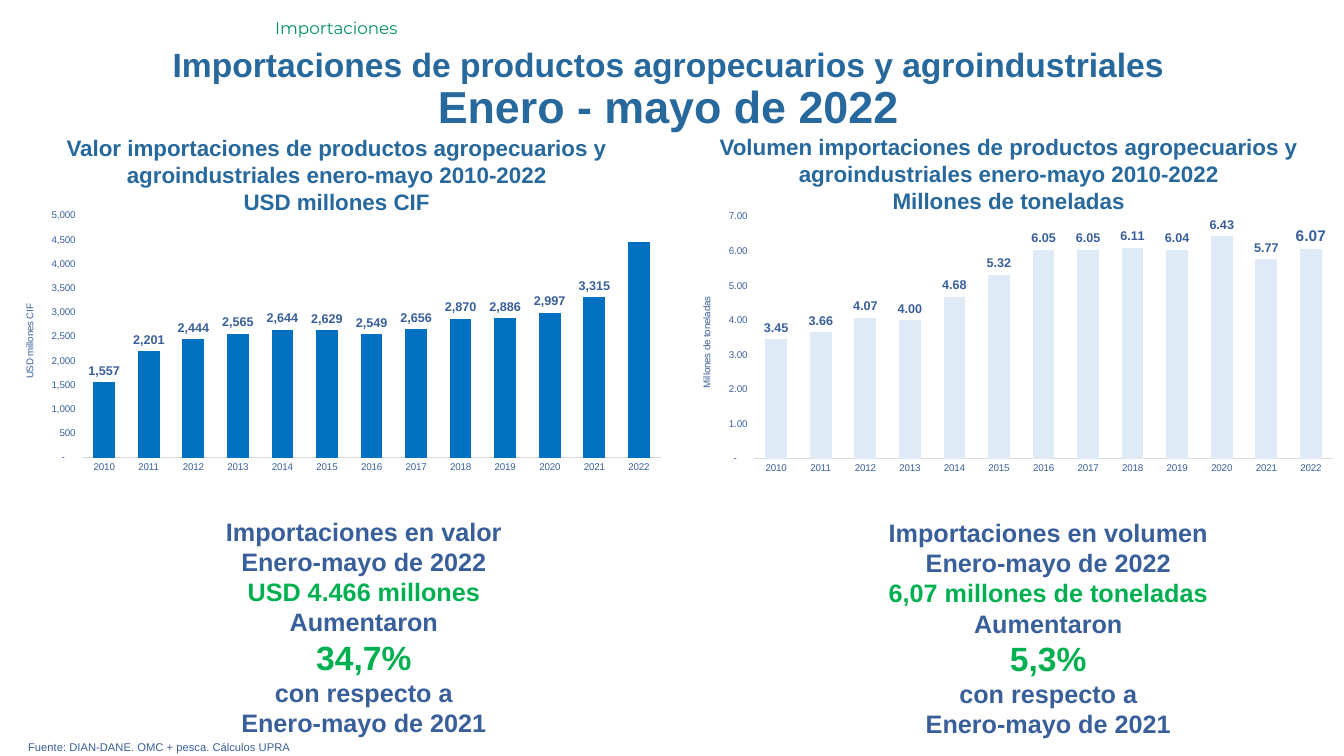
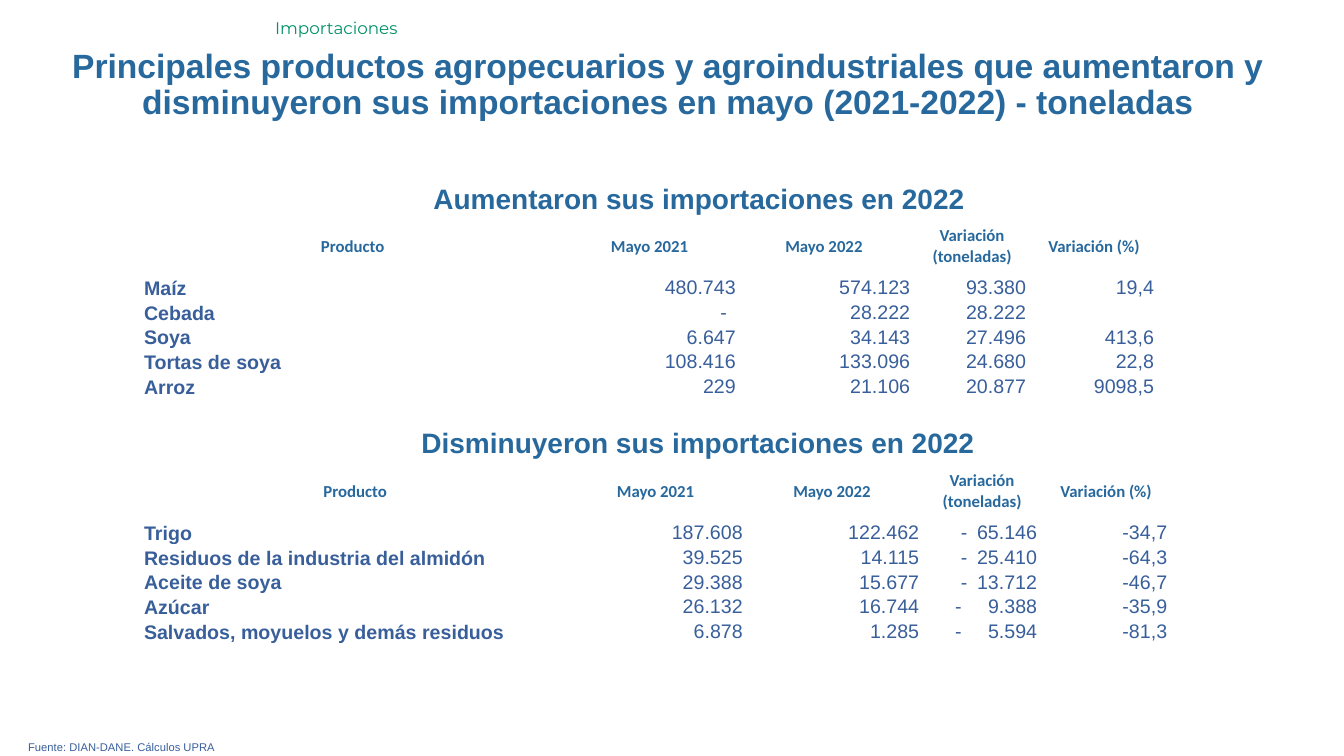
from pptx import Presentation
from pptx.chart.data import CategoryChartData
from pptx.dml.color import RGBColor
from pptx.enum import chart as ch, text
from pptx.oxml import ns, parse_xml
from pptx.util import Pt

GREEN, TITLE, BODY, ACCENT = "009267", "27689D", "395F9B", "00B050"
BLUE, PALE, WHITE, GREY = "0070C0", "DEEBF7", "FFFFFF", "D9D9D9"
LEFT, CENTER, RIGHT = text.PP_ALIGN.LEFT, text.PP_ALIGN.CENTER, text.PP_ALIGN.RIGHT


def rgb(value):
    return RGBColor.from_string(value)


def style(font, size, color, bold=False, name="Arial"):
    font.size, font.bold, font.name = Pt(size), bold, name
    font.color.rgb = rgb(color)


def layout(x, y, w, h):
    return parse_xml(
        f'<c:layout {ns.nsdecls("c")}><c:manualLayout><c:layoutTarget val="inner"/>'
        '<c:xMode val="edge"/><c:yMode val="edge"/>'
        f'<c:x val="{x}"/><c:y val="{y}"/><c:w val="{w}"/><c:h val="{h}"/>'
        '</c:manualLayout></c:layout>')


class Deck:
    def __init__(self):
        self.prs = Presentation()
        self.prs.slide_width, self.prs.slide_height = Pt(960), Pt(540)

    def slide(self, lines, box, source):
        self.s = self.prs.slides.add_slide(self.prs.slide_layouts[5])
        self.title(lines, box)
        self.text(189.4, 9.4, 770, 21.6, ["Importaciones"], 12, GREEN, False, LEFT, "Montserrat")
        self.text(13, 525, 929.5, 17, [source], 8, BODY, False, text.PP_ALIGN.JUSTIFY)

    def title(self, lines, box):
        sp = self.s.shapes.title
        sp.left, sp.top, sp.width, sp.height = map(Pt, box)
        tf = sp.text_frame
        tf.auto_size = text.MSO_AUTO_SIZE.NONE
        tf.vertical_anchor = text.MSO_ANCHOR.MIDDLE
        p = tf.paragraphs[0]
        p.alignment, p.line_spacing = CENTER, 0.9
        for i, (line, size) in enumerate(lines):
            if i:
                p.add_line_break()
            r = p.add_run()
            r.text = line
            style(r.font, size, TITLE, True)

    def text(self, x, y, w, h, lines, size, color, bold=True, align=CENTER, name="Arial"):
        tf = self.s.shapes.add_textbox(Pt(x), Pt(y), Pt(w), Pt(h)).text_frame
        tf.word_wrap = True
        tf.auto_size = text.MSO_AUTO_SIZE.SHAPE_TO_FIT_TEXT
        for i, line in enumerate(lines):
            p = tf.add_paragraph() if i else tf.paragraphs[0]
            words, p_size, p_color = (line, size, color) if isinstance(line, str) else line
            p.text, p.alignment = words, align
            style(p.font, p_size, p_color, bold, name)

    def chart(self, x, y, values, unit, fmt, top, step, color, last_color):
        data = CategoryChartData(number_format=fmt)
        data.categories = [str(year) for year in range(2010, 2023)]
        data.add_series("Series 1", values)
        chart = self.s.shapes.add_chart(
            ch.XL_CHART_TYPE.COLUMN_CLUSTERED, Pt(x), Pt(y), Pt(480), Pt(247.7), data).chart
        chart.has_title = chart.has_legend = False
        style(chart.font, 10, "000000")
        for axis in (chart.category_axis, chart.value_axis):
            axis.major_tick_mark = axis.minor_tick_mark = ch.XL_TICK_MARK.NONE
            axis.has_major_gridlines = False
            style(axis.tick_labels.font, 7, BODY)
        line = chart.category_axis.format.line
        line.color.rgb, line.width = rgb(GREY), Pt(0.75)
        axis = chart.value_axis
        axis.format.line.fill.background()
        axis.minimum_scale, axis.maximum_scale, axis.major_unit = 0, top, step
        axis.tick_labels.number_format = f'{fmt}_-;;"-"??_-'
        axis.tick_labels.number_format_is_linked = False
        tf = axis.axis_title.text_frame
        tf.text = unit
        style(tf.paragraphs[0].font, 7, BODY)
        tf._txBody.bodyPr.set("rot", "-5400000")

        plot = chart.plots[0]
        plot.gap_width, plot.overlap, plot.vary_by_categories = 105, 74, False
        ser = plot.series[0]
        ser.format.fill.solid()
        ser.format.fill.fore_color.rgb = rgb(color)
        labels = ser.data_labels
        labels.show_value = True
        labels.number_format, labels.number_format_is_linked = fmt, False
        labels.position = ch.XL_LABEL_POSITION.OUTSIDE_END
        style(labels.font, 9, BODY, True)
        last = ser.points[len(values) - 1].data_label
        style(last.font, 11, last_color, True)
        last.position = ch.XL_LABEL_POSITION.OUTSIDE_END
        idx = chart._chartSpace.xpath(".//c:dLbl/c:idx")[0]
        idx.addnext(parse_xml(
            f'<c:spPr {ns.nsdecls("c", "a")}><a:solidFill><a:srgbClr val="{color}"/>'
            '</a:solidFill></c:spPr>'))
        idx.addnext(parse_xml(
            f'<c:numFmt {ns.nsdecls("c")} formatCode="{fmt}" sourceLinked="0"/>'))
        area = chart._chartSpace.xpath(".//c:plotArea")[0]
        for old in area.xpath("c:layout"):
            area.remove(old)
        area.insert(0, layout(0.122, 0.102, 0.862, 0.698))

    def cell(self, cell, words, size, color, bold, align, name="Arial", right=0.7):
        cell.fill.background()
        cell.margin_left = cell.margin_top = Pt(0.7)
        cell.margin_right, cell.margin_bottom = Pt(right), 0
        cell.vertical_anchor = text.MSO_ANCHOR.MIDDLE
        p = cell.text_frame.paragraphs[0]
        if words.startswith("- "):
            number = words[2:]
            words, align = f"\t-\t{number}", LEFT
            stops = (33 if len(number) > 5 else 29, 83)
            tabs = "".join(f'<a:tab pos="{Pt(stop)}" algn="r"/>' for stop in stops)
            p._p.get_or_add_pPr().append(
                parse_xml(f'<a:tabLst {ns.nsdecls("a")}>{tabs}</a:tabLst>'))
        if words:
            p.text = words
        else:
            p._p.get_or_add_endParaRPr().set("sz", str(size * 100))
        p.alignment = align
        style(p.font, size, color, bold, name)

    def table(self, y, widths, rows):
        header = ("Producto", "Mayo 2021", "Mayo 2022", "Variación (toneladas)", "Variación (%)")
        tbl = self.s.shapes.add_table(
            len(rows) + 1, len(header), Pt(102.2), Pt(y), Pt(sum(widths)), Pt(129.8)).table
        tbl.first_row = tbl.horz_banding = False
        for col, width in zip(tbl.columns, widths):
            col.width = Pt(width)
        for i, row in enumerate(tbl.rows):
            row.height = Pt(17.6 if i else 41.8)
        for j, words in enumerate(header):
            self.cell(tbl.cell(0, j), words, 12, TITLE, True, CENTER, "Calibri")
        for i, row in enumerate(rows, 1):
            for j, words in enumerate(row):
                right = 7 if words == "-" else 5 if j == 3 else 0.7
                self.cell(tbl.cell(i, j), words, 14, BODY, j == 0, RIGHT if j else LEFT, right=right)
            tbl.cell(i, 0).vertical_anchor = text.MSO_ANCHOR.BOTTOM


def main():
    deck = Deck()
    deck.slide([("Importaciones de productos agropecuarios y agroindustriales", 24),
                ("Enero - mayo de 2022", 32)],
               (63.4, 36, 828, 57.6), "Fuente: DIAN-DANE. OMC + pesca. Cálculos UPRA")
    panels = [
        (0, 92.2, 128.9, "Valor", "USD millones CIF", "USD millones CIF",
         (1557, 2201, 2444, 2565, 2644, 2629, 2549, 2656, 2870, 2886, 2997, 3315, 4466),
         "#,##0", 5000, 500, BLUE, WHITE,
         105.1, 365, "USD 4.466 millones", "34,7%"),
        (480, 91.4, 129.6, "Volumen", "Millones de toneladas", "Millones de toneladas",
         (3.45, 3.66, 4.07, 4, 4.68, 5.32, 6.05, 6.05, 6.11, 6.04, 6.43, 5.77, 6.07),
         "0.00", 7, 1, PALE, BODY,
         594, 365.8, "6,07 millones de toneladas", "5,3%"),
    ]
    for (x, head_y, chart_y, kind, unit, axis, values, fmt, top, step, color, last_color,
         sum_x, sum_y, amount, change) in panels:
        deck.chart(x, chart_y, values, axis, fmt, top, step, color, last_color)
        deck.text(x + 1, head_y, 479, 65.5,
                  [f"{kind} importaciones de productos agropecuarios y agroindustriales "
                   "enero-mayo 2010-2022", unit], 16, TITLE)
        deck.text(sum_x, sum_y, 309.6, 167,
                  [f"Importaciones en {kind.lower()}", "Enero-mayo de 2022",
                   (amount, 18, ACCENT), "Aumentaron", (change, 24, ACCENT),
                   "con respecto a", "Enero-mayo de 2021"], 18, BODY)

    deck.slide([("Principales productos agropecuarios y agroindustriales que aumentaron y "
                 "disminuyeron sus importaciones en mayo (2021-2022) - toneladas", 24)],
               (0, 38.2, 954, 45.4), "Fuente: DIAN-DANE. Cálculos UPRA")
    deck.text(157, 126, 684.7, 31.7, ["Aumentaron sus importaciones en 2022"], 20, TITLE)
    deck.table(154.8, (299.5, 124.6, 124.6, 87.1, 87.1), [
        ("Maíz", "480.743", "574.123", "93.380", "19,4"),
        ("Cebada", "-", "28.222", "28.222", ""),
        ("Soya", "6.647", "34.143", "27.496", "413,6"),
        ("Tortas de soya", "108.416", "133.096", "24.680", "22,8"),
        ("Arroz", "229", "21.106", "20.877", "9098,5")])
    deck.text(128.2, 300.5, 740.9, 31.7, ["Disminuyeron sus importaciones en 2022"], 20, TITLE)
    deck.table(329.8, (303.1, 126, 126, 88.6, 88.6), [
        ("Trigo", "187.608", "122.462", "- 65.146", "-34,7"),
        ("Residuos de la industria del almidón", "39.525", "14.115", "- 25.410", "-64,3"),
        ("Aceite de soya", "29.388", "15.677", "- 13.712", "-46,7"),
        ("Azúcar", "26.132", "16.744", "- 9.388", "-35,9"),
        ("Salvados, moyuelos y demás residuos", "6.878", "1.285", "- 5.594", "-81,3")])
    deck.prs.save("out.pptx")


if __name__ == "__main__":
    main()
